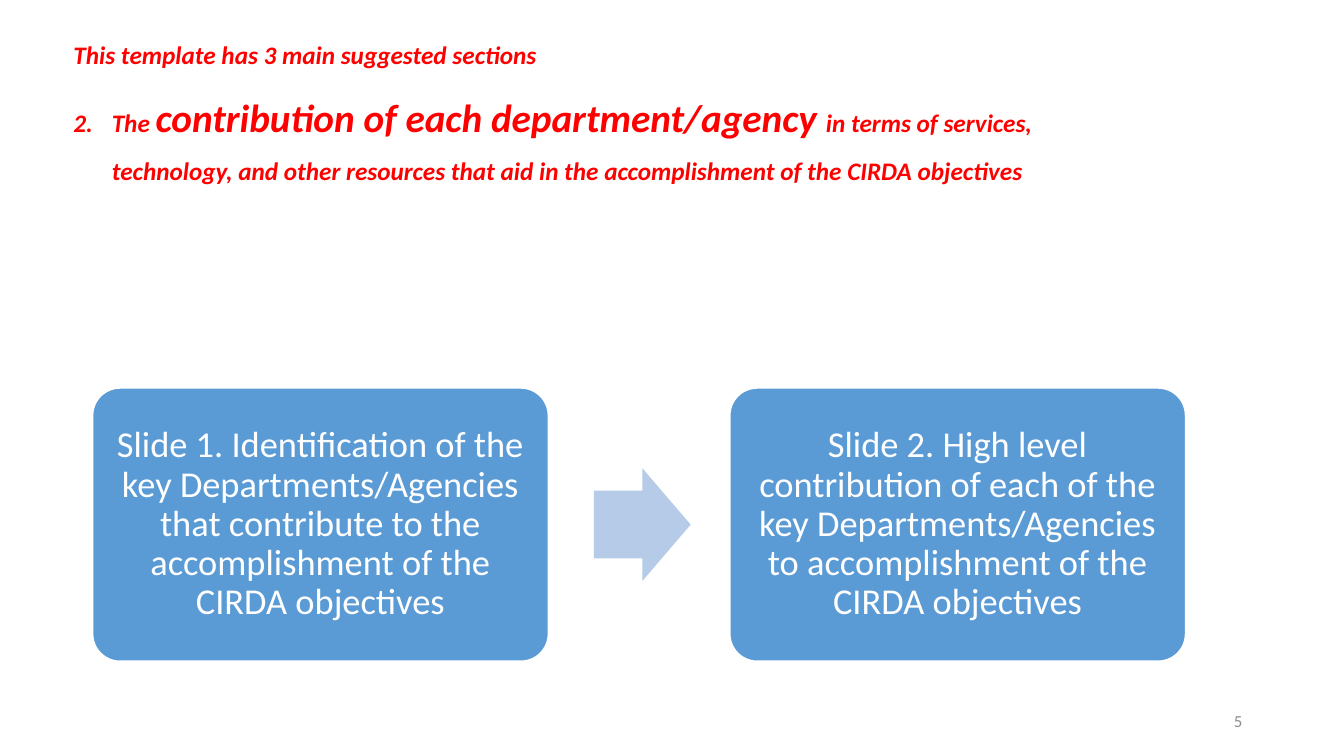
from dataclasses import dataclass

from lxml import etree
from pptx import Presentation
from pptx.dml.color import RGBColor
from pptx.enum.shapes import MSO_SHAPE
from pptx.enum.text import MSO_ANCHOR, MSO_AUTO_SIZE, PP_ALIGN
from pptx.oxml.ns import qn
from pptx.util import Inches, Pt

ROUND, ARROW = MSO_SHAPE.ROUNDED_RECTANGLE, MSO_SHAPE.RIGHT_ARROW
MIDDLE, GROW = MSO_ANCHOR.MIDDLE, MSO_AUTO_SIZE.SHAPE_TO_FIT_TEXT
LEFT, CENTER, RIGHT = PP_ALIGN.LEFT, PP_ALIGN.CENTER, PP_ALIGN.RIGHT


@dataclass(frozen=True)
class Theme:
    font: str = "Calibri"
    red: str = "FF0000"
    blue: str = "5B9BD5"
    pale: str = "B5CBE7"
    white: str = "FFFFFF"
    gray: str = "8C8C8C"
    lead: int = 28
    step: int = 26
    body: int = 18
    note: int = 12


def write(para, text, *, font, size, color, bold=False, italic=False):
    """Add one formatted run to a paragraph."""
    run = para.add_run()
    run.text = text
    run.font.name = font
    run.font.size = Pt(size)
    run.font.bold = bold
    run.font.italic = italic
    run.font.color.rgb = RGBColor.from_string(color)


class Board:
    """Places elements by percent of the slide's width and height."""

    def __init__(self, deck, theme):
        self.theme = theme
        self.wide, self.high = deck.slide_width, deck.slide_height
        self.slide = deck.slides.add_slide(deck.slide_layouts[6])

    def place(self, x, y, w, h):
        pairs = ((x, self.wide), (y, self.high), (w, self.wide), (h, self.high))
        return [round(share * full / 100) for share, full in pairs]

    def shape(self, kind, area, fill, adjust, line=None):
        item = self.slide.shapes.add_shape(kind, *self.place(*area))
        item.shadow.inherit = False
        item.fill.solid()
        item.fill.fore_color.rgb = RGBColor.from_string(fill)
        for i, value in enumerate(adjust):
            item.adjustments[i] = value
        if line:
            item.line.color.rgb = RGBColor.from_string(line)
            item.line.width = Pt(1)
        else:
            item.line.fill.background()
        return item

    def text(self, area):
        frame = self.slide.shapes.add_textbox(*self.place(*area)).text_frame
        frame.word_wrap = True
        return frame

    def card(self, area, text):
        look = self.theme
        frame = self.shape(ROUND, area, look.blue, [0.1], look.white).text_frame
        frame.word_wrap = True
        frame.vertical_anchor = MIDDLE
        frame.margin_left = frame.margin_right = Inches(0.11)
        frame.margin_top = frame.margin_bottom = Inches(0.11)
        para = frame.paragraphs[0]
        para.alignment = CENTER
        para.line_spacing = 0.9
        write(para, text, font=look.font, size=look.step, color=look.white)

    def arrow(self, area):
        self.shape(ARROW, area, self.theme.pale, [0.6, 0.5])

    def intro(self, area, title, point, start):
        look = self.theme
        frame = self.text(area)
        frame.auto_size = GROW
        head, item = frame.paragraphs[0], frame.add_paragraph()
        # Numbered point with a hanging indent
        props = item._p.get_or_add_pPr()
        props.set("marL", str(Inches(0.38)))
        props.set("indent", str(-Inches(0.38)))
        etree.SubElement(props, qn("a:buFont"), typeface="+mj-lt")
        etree.SubElement(props, qn("a:buAutoNum"), type="arabicPeriod",
                         startAt=str(start))
        for para, parts in ((head, [(title, look.body)]), (item, point)):
            para.alignment = LEFT
            para.line_spacing = 1.5
            for words, size in parts:
                write(para, words, font=look.font, size=size, color=look.red,
                      bold=True, italic=True)

    def number(self, area, text):
        look = self.theme
        frame = self.text(area)
        frame.vertical_anchor = MIDDLE
        para = frame.paragraphs[0]
        para.alignment = RIGHT
        write(para, text, font=look.font, size=look.note, color=look.gray)


def main():
    deck = Presentation()
    deck.slide_width, deck.slide_height = Inches(13.33), Inches(7.5)
    theme = Theme()
    board = Board(deck, theme)

    # Two steps joined by a block arrow
    steps = [
        "Slide 1. Identification of the key Departments/Agencies that "
        "contribute to the accomplishment of the CIRDA objectives",
        "Slide 2. High level contribution of each of the key "
        "Departments/Agencies to accomplishment of the CIRDA objectives",
    ]
    left, top, wide, high, pitch = 6.9, 51.33, 33.9, 36.13, 47.41
    for i, text in enumerate(steps):
        board.card((left + i * pitch, top, wide, high), text)
    tall = 14.93
    board.arrow((44.19, top + (high - tall) / 2, 7.2, tall))

    # Page number
    board.number((70.67, 92.67, 22.5, 5.33), "5")

    # Opening text
    board.intro(
        (4.73, 2.53, 80.35, 22.93),
        "This template has 3 main suggested sections",
        [("The ", theme.body),
         ("contribution of each department/agency ", theme.lead),
         ("in terms of services, technology, and other resources that aid in "
          "the accomplishment of the CIRDA objectives", theme.body)],
        start=2,
    )
    deck.save("out.pptx")


if __name__ == "__main__":
    main()
